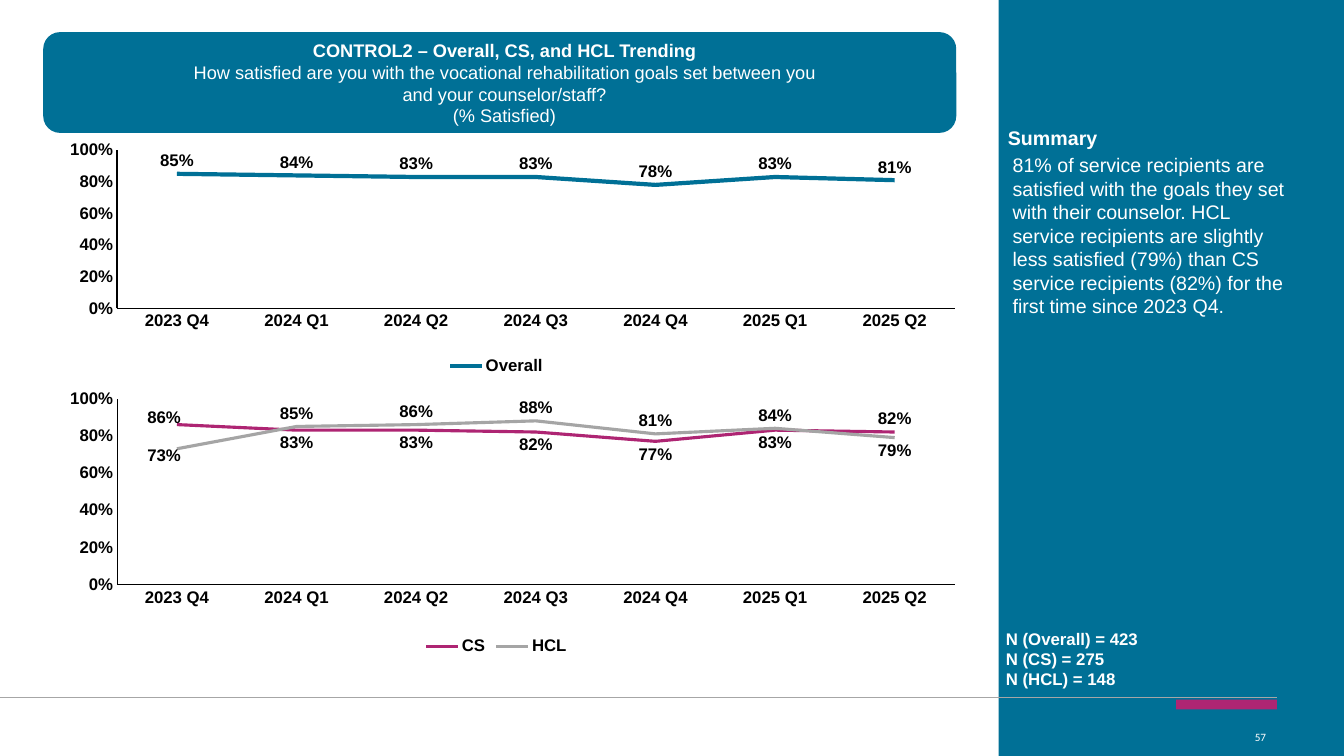
from lxml import etree
from pptx import Presentation
from pptx.chart.data import CategoryChartData
from pptx.dml.color import RGBColor
from pptx.enum.chart import (
    XL_CHART_TYPE, XL_LABEL_POSITION, XL_LEGEND_POSITION, XL_MARKER_STYLE, XL_TICK_MARK)
from pptx.enum.shapes import MSO_CONNECTOR, MSO_SHAPE
from pptx.enum.text import MSO_ANCHOR, MSO_AUTO_SIZE, PP_ALIGN
from pptx.oxml.ns import qn
from pptx.util import Cm, Pt

COLORS = {
    "teal": "007096", "magenta": "AE2573", "gray": "A5A5A5", "rule": "A6A6A6",
    "white": "FFFFFF", "black": "000000",
}
QUARTERS = ["2023 Q4", "2024 Q1", "2024 Q2", "2024 Q3", "2024 Q4", "2025 Q1", "2025 Q2"]
ABOVE, BELOW = XL_LABEL_POSITION.ABOVE, XL_LABEL_POSITION.BELOW


def color(name):
    return RGBColor.from_string(COLORS[name])


def style_font(font, size, color_name, bold=False, family="Arial"):
    font.size, font.bold, font.name = Pt(size), bold, family
    font.color.rgb = color(color_name)


def add_block(slide, preset, box, color_name):
    shape = slide.shapes.add_shape(preset, *map(Cm, box))
    shape.shadow.inherit = False
    shape.fill.solid()
    shape.fill.fore_color.rgb = color(color_name)
    shape.line.fill.background()


def add_rule(slide, left, right, top):
    rule = slide.shapes.add_connector(MSO_CONNECTOR.STRAIGHT, Cm(left), Cm(top), Cm(right), Cm(top))
    rule.line.color.rgb = color("rule")
    rule.line.width = Pt(0.75)
    etree.SubElement(rule.element.spPr, qn("a:effectLst"))


def fill_text(text_frame, lines, alignment=PP_ALIGN.LEFT):
    """Each line is (text, size, color name, bold, font family)."""
    text_frame.word_wrap = True
    text_frame.text = "\n".join(line[0] for line in lines)
    for paragraph, (_, *style) in zip(text_frame.paragraphs, lines):
        paragraph.alignment = alignment
        for run in paragraph.runs:
            style_font(run.font, *style)


def add_text(slide, box, lines, alignment=PP_ALIGN.LEFT):
    text_frame = slide.shapes.add_textbox(*map(Cm, box)).text_frame
    fill_text(text_frame, lines, alignment)
    return text_frame


def set_title(slide, box, lines):
    title = slide.shapes.title
    title.left, title.top, title.width, title.height = map(Cm, box)
    title.text_frame.auto_size = MSO_AUTO_SIZE.NONE
    title.text_frame.vertical_anchor = MSO_ANCHOR.TOP
    fill_text(title.text_frame, lines, PP_ALIGN.CENTER)
    # Bring the title in front of the banner
    title.element.getparent().append(title.element)


def make_layout(**settings):
    layout = etree.Element(qn("c:layout"))
    manual = etree.SubElement(layout, qn("c:manualLayout"))
    for tag, value in settings.items():
        etree.SubElement(manual, qn(f"c:{tag}")).set("val", str(value))
    return layout


def set_plot_layout(chart, height):
    plot_area = chart._chartSpace.chart.plotArea
    for old_layout in plot_area.findall(qn("c:layout")):
        plot_area.remove(old_layout)
    plot_area.insert(0, make_layout(
        layoutTarget="inner", xMode="edge", yMode="edge",
        x=0.087, y=0.07, w=0.912, h=height))


def style_axis(axis, width):
    axis.major_tick_mark = axis.minor_tick_mark = XL_TICK_MARK.NONE
    axis.has_major_gridlines = False
    axis.format.line.color.rgb = color("black")
    axis.format.line.width = Pt(width)
    style_font(axis.tick_labels.font, 12, "black", True)


def style_series(series, color_name, width, position):
    series.smooth = False
    series.marker.style = XL_MARKER_STYLE.NONE
    series.format.line.color.rgb = color(color_name)
    series.format.line.width = Pt(width)
    labels = series.data_labels
    labels.show_value = True
    labels.number_format, labels.number_format_is_linked = "0%", False
    labels.position = position
    style_font(labels.font, 12, "black", True)


def move_point_label(series, index, position, shift=None):
    label = series.points[index].data_label
    label.position = position
    style_font(label.font, 12, "black", True)
    if shift:
        point_index = series._element.find(f".//{qn('c:dLbl')}/{qn('c:idx')}[@val='{index}']")
        point_index.addnext(make_layout(x=shift[0], y=shift[1]))


def add_trend_chart(slide, box, plot_height, line_width, value_axis_width, trends):
    """Each trend is (name, values, color name, label position)."""
    data = CategoryChartData(number_format="0%")
    data.categories = QUARTERS
    for name, values, *_ in trends:
        data.add_series(name, values)
    chart = slide.shapes.add_chart(XL_CHART_TYPE.LINE, *map(Cm, box), data).chart
    chart.has_title = False
    style_font(chart.font, 12, "black", True)
    chart.has_legend = True
    chart.legend.position = XL_LEGEND_POSITION.BOTTOM
    chart.legend.include_in_layout = False
    style_font(chart.legend.font, 12, "black", True)
    style_axis(chart.category_axis, 0.75)
    value_axis = chart.value_axis
    style_axis(value_axis, value_axis_width)
    value_axis.minimum_scale, value_axis.maximum_scale, value_axis.major_unit = 0, 1, 0.2
    value_axis.tick_labels.number_format = "0%"
    value_axis.tick_labels.number_format_is_linked = False
    chart.plots[0].vary_by_categories = False
    for series, (_, _, color_name, position) in zip(chart.plots[0].series, trends):
        style_series(series, color_name, line_width, position)
    set_plot_layout(chart, plot_height)
    return chart


def main():
    presentation = Presentation()
    presentation.slide_width, presentation.slide_height = Cm(33.87), Cm(19.05)
    slide = presentation.slides.add_slide(presentation.slide_layouts[5])

    # Background blocks and footer rule
    add_block(slide, MSO_SHAPE.ROUNDED_RECTANGLE, (1.09, 0.81, 23.01, 2.54), "teal")
    add_block(slide, MSO_SHAPE.RECTANGLE, (25.17, 0, 8.7, 19.05), "teal")
    add_rule(slide, 0, 32.18, 17.58)
    add_block(slide, MSO_SHAPE.RECTANGLE, (29.64, 17.63, 2.54, 0.25), "magenta")

    # Title
    set_title(slide, (4.24, 0.86, 16.94, 1.57), [
        ("CONTROL2 – Overall, CS, and HCL Trending", 13, "white", True),
        ("How satisfied are you with the vocational rehabilitation goals set between you "
         "and your counselor/staff?", 13, "white"),
        ("(% Satisfied)", 13, "white"),
    ])

    # Trend charts
    add_trend_chart(slide, (0.94, 3.35, 23.14, 6.2), 0.643, 3, 1, [
        ("Overall", [0.85, 0.84, 0.83, 0.83, 0.78, 0.83, 0.81], "teal", ABOVE),
    ])
    group_chart = add_trend_chart(slide, (0.94, 9.55, 23.14, 7.06), 0.664, 2.25, 0.75, [
        ("CS", [0.86, 0.83, 0.83, 0.82, 0.77, 0.83, 0.82], "magenta", BELOW),
        ("HCL", [0.73, 0.85, 0.86, 0.88, 0.81, 0.84, 0.79], "gray", ABOVE),
    ])
    # End labels swap sides where the two lines cross
    for series, position, drop in zip(group_chart.plots[0].series, (ABOVE, BELOW), (0.02, -0.02)):
        move_point_label(series, 0, position, (-0.014, drop))
        move_point_label(series, len(QUARTERS) - 1, position)

    # Summary panel
    add_text(slide, (25.15, 3.05, 8.74, 0.86), [("Summary", 14, "white", True)])
    summary = add_text(slide, (25.27, 3.73, 7.65, 5.11), [(
        "81% of service recipients are satisfied with the goals they set with their counselor. "
        "HCL service recipients are slightly less satisfied (79%) than CS service recipients "
        "(82%) for the first time since 2023 Q4.", 14, "white")])
    summary.paragraphs[0].space_before = Pt(3)
    sample_sizes = {"Overall": 423, "CS": 275, "HCL": 148}
    add_text(slide, (25.1, 15.72, 6.35, 1.8), [
        (f"N ({group}) = {size}", 12, "white", True) for group, size in sample_sizes.items()])

    # Page number
    page_number = add_text(slide, (19.41, 18.19, 12.75, 0.76),
                           [("57", 8, "white", False, "Calibri")], PP_ALIGN.RIGHT)
    page_number.vertical_anchor = MSO_ANCHOR.MIDDLE

    presentation.save("out.pptx")


if __name__ == "__main__":
    main()
